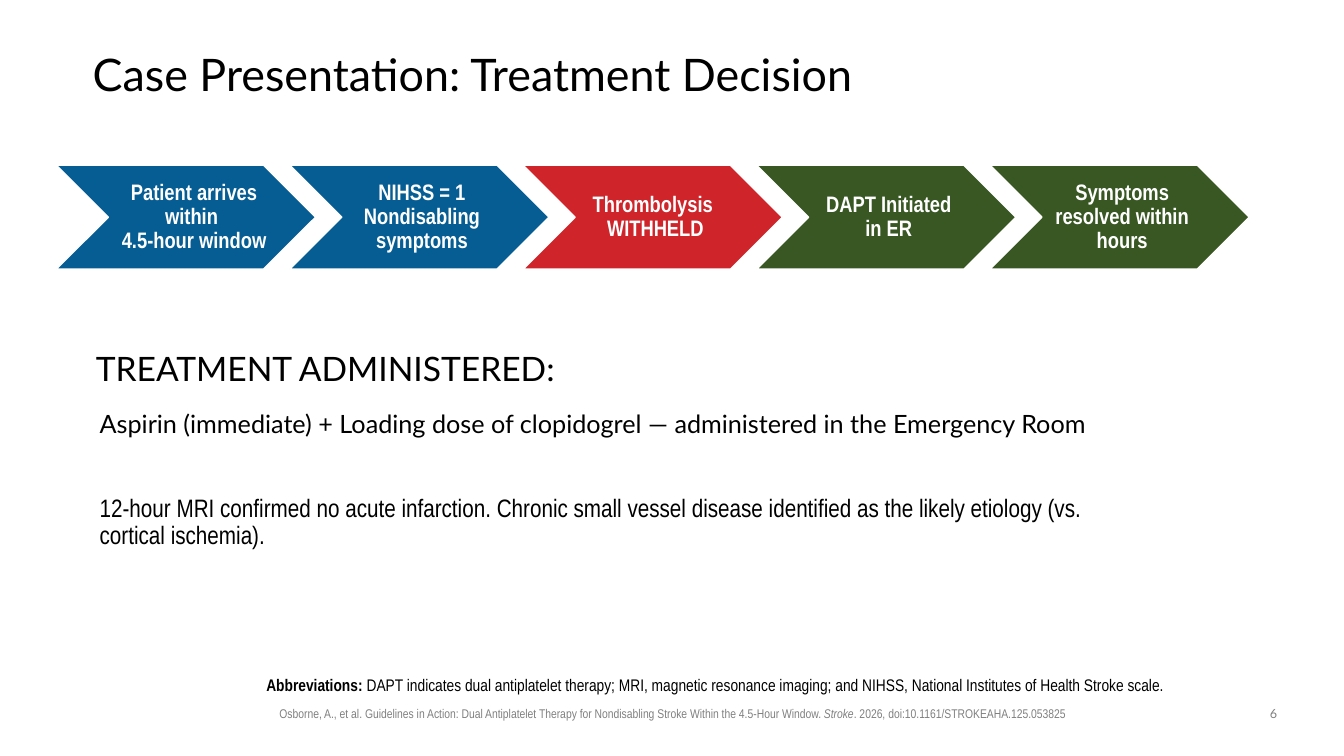
from pptx import Presentation
from pptx import util as u
from pptx.dml.color import RGBColor
from pptx.enum import shapes, text

INCH = u.Inches
MID = text.PP_ALIGN.CENTER
ANCHOR = text.MSO_ANCHOR
LATO, SLIM = "Lato", "Arial Narrow"

deck = Presentation()
deck.slide_width, deck.slide_height = INCH(13.33), INCH(7.5)
slide = deck.slides.add_slide(deck.slide_layouts[6])


def tint(code):
    return RGBColor.from_string(code)


def write(place, paras, pad=(0.1, 0.05, 0.1, 0.05), anchor=ANCHOR.TOP, color="000000"):
    """Each paragraph is (format dict, [(words, font dict), ...])."""
    frame = slide.shapes.add_textbox(*map(INCH, place)).text_frame
    frame.word_wrap, frame.vertical_anchor = True, anchor
    for side, gap in zip(("left", "top", "right", "bottom"), pad):
        setattr(frame, "margin_" + side, INCH(gap))
    for i, (form, runs) in enumerate(paras):
        para = frame.add_paragraph() if i else frame.paragraphs[0]
        for key, val in form.items():
            setattr(para, key, val)
        for words, look in runs:
            for j, line in enumerate(words.split("\n")):
                if j:
                    para.add_line_break()
                run = para.add_run()
                run.text = line
                run.font.color.rgb = tint(color)
                for key, val in look.items():
                    setattr(run.font, key, val)


# Title
write((0.92, 0.4, 11.5, 0.72),
      [({"line_spacing": 0.9},
        [("Case Presentation: Treatment Decision", {"name": LATO, "size": u.Pt(32)})])],
      pad=(0, 0, 0, 0), anchor=ANCHOR.MIDDLE)

# Chevron timeline
BLUE, RED, GREEN = "065D93", "CF242A", "385723"
steps = [
    ("Patient arrives within \n4.5-hour window", BLUE, 1.65),
    ("NIHSS = 1\nNondisabling symptoms", BLUE, 1.54),
    ("Thrombolysis \nWITHHELD", RED, 1.54),
    ("DAPT Initiated in ER", GREEN, 1.54),
    ("Symptoms resolved within hours", GREEN, 1.54),
]
first, last, top, high = 0.56, 9.82, 1.64, 1.03
pitch = (last - first) / (len(steps) - 1)
label = {"name": SLIM, "size": u.Pt(16), "bold": True}
for i, (words, fill, wide) in enumerate(steps):
    left = first + i * pitch
    arrow = slide.shapes.add_shape(shapes.MSO_SHAPE.CHEVRON, INCH(left), INCH(top),
                                   INCH(2.57), INCH(high))
    arrow.shadow.inherit = False
    arrow.fill.solid()
    arrow.fill.fore_color.rgb = tint(fill)
    arrow.line.color.rgb = tint("FFFFFF")
    arrow.line.width = u.Pt(1)
    write((left + high / 2, top, wide, high),
          [({"alignment": MID, "line_spacing": 0.9}, [(words, label)])],
          pad=(0.07, 0.02, 0.02, 0.02), anchor=ANCHOR.MIDDLE, color="FFFFFF")

# Treatment heading and details
write((0.95, 3.4, 5.95, 0.5),
      [({}, [("TREATMENT ADMINISTERED:", {"name": LATO, "size": u.Pt(24)})])],
      pad=(0, 0.05, 0.1, 0.05))
write((0.89, 4.04, 10.19, 1.74), [
    ({"line_spacing": 0.9},
     [("Aspirin (immediate) + Loading dose of clopidogrel — administered in the "
       "Emergency Room", {"name": LATO, "size": u.Pt(18)})]),
    ({"line_spacing": 0.9, "space_before": u.Pt(40)},
     [("12-hour MRI confirmed no acute infarction. Chronic small vessel disease "
       "identified as the likely etiology (vs. cortical ischemia).",
       {"name": SLIM, "size": u.Pt(18)})]),
])

# Abbreviations
note = {"name": SLIM, "size": u.Pt(12)}
write((1.67, 6.58, 10.95, 0.37),
      [({"alignment": MID, "line_spacing": 0.9},
        [("Abbreviations: ", {**note, "bold": True}),
         ("DAPT indicates dual antiplatelet therapy; MRI, magnetic resonance imaging; "
          "and NIHSS, National Institutes of Health Stroke scale.", note)])],
      pad=(0, 0.05, 0.1, 0.05), anchor=ANCHOR.BOTTOM)

# Citation and page number
cite = {"name": SLIM, "size": u.Pt(9)}
write((2.36, 6.95, 8.62, 0.25),
      [({"alignment": MID},
        [("Osborne, A., et al. Guidelines in Action: Dual Antiplatelet Therapy for "
          "Nondisabling Stroke Within the 4.5-Hour Window. ", cite),
         ("Stroke", {**cite, "italic": True}),
         (". 2026, doi:10.1161/STROKEAHA.125.053825", cite)])],
      color="808080")
write((12.42, 6.95, 0.42, 0.26),
      [({"alignment": MID}, [("6", {"name": LATO, "size": u.Pt(9)})])],
      color="808080")

deck.save("out.pptx")
